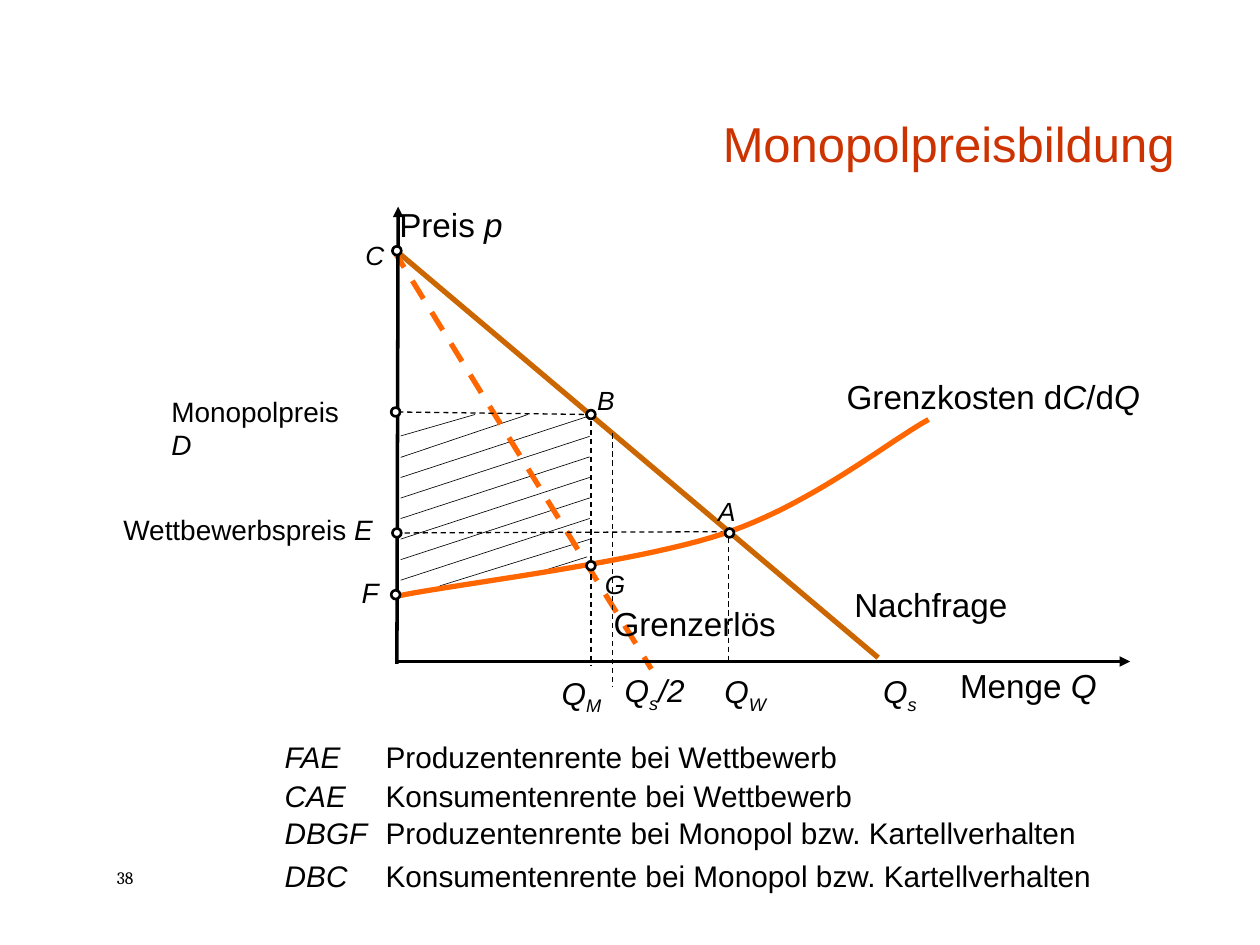
from lxml import etree
from pptx import Presentation
from pptx.dml.color import RGBColor
from pptx.enum.dml import MSO_LINE
from pptx.enum.shapes import MSO_CONNECTOR, MSO_SHAPE
from pptx.enum.text import MSO_ANCHOR, MSO_AUTO_SIZE, PP_ALIGN
from pptx.oxml.ns import qn
from pptx.util import Inches, Pt

COLORS = {
    "ink": "000000",
    "paper": "FFFFFF",
    "title": "CC3300",
    "demand": "CC6600",
    "marginal": "FF6600",
}
RGB = {name: RGBColor.from_string(value) for name, value in COLORS.items()}

presentation = Presentation()
presentation.slide_width, presentation.slide_height = Inches(10), Inches(7.5)
slide = presentation.slides.add_slide(presentation.slide_layouts[5])
shapes = slide.shapes


def add_line(start, end, width, color="ink", dashed=False, arrow=False):
    line = shapes.add_connector(
        MSO_CONNECTOR.STRAIGHT, *[Inches(value) for value in (*start, *end)])
    line.line.color.rgb = RGB[color]
    line.line.width = Pt(width)
    if dashed:
        line.line.dash_style = MSO_LINE.DASH
    if arrow:
        etree.SubElement(line.line._get_or_add_ln(), qn("a:tailEnd"), type="triangle")
    etree.SubElement(line._element.spPr, qn("a:effectLst"))


def add_text(left, top, width, height, size, runs, wrap=False, margins=(0, 0), font="Arial"):
    box = shapes.add_textbox(Inches(left), Inches(top), Inches(width), Inches(height))
    frame = box.text_frame
    frame.word_wrap = wrap
    frame.margin_left = frame.margin_right = Inches(margins[0])
    frame.margin_top = frame.margin_bottom = Inches(margins[1])
    paragraph = frame.paragraphs[0]
    paragraph.font.size = Pt(size)
    paragraph.font.name = font
    paragraph.font.color.rgb = RGB["ink"]
    for text, style in runs:
        run = paragraph.add_run()
        run.text = text
        run.font.italic = "i" in style
        if "sub" in style:
            run.font._element.set("baseline", "-25000")
    return paragraph


title = shapes.title
title.left, title.top, title.width, title.height = (
    Inches(value) for value in (2.09, 0.42, 7.33, 1))
title_frame = title.text_frame
title_frame.text = "Monopolpreisbildung"
title_frame.vertical_anchor = MSO_ANCHOR.BOTTOM
title_frame.auto_size = MSO_AUTO_SIZE.NONE
title_paragraph = title_frame.paragraphs[0]
title_paragraph.alignment = PP_ALIGN.RIGHT
title_paragraph.font.size = Pt(28)
title_paragraph.font.name = "Arial"
title_paragraph.font.color.rgb = RGB["title"]

for row in range(6):
    y = 3.79 + 0.163 * row
    add_line((3.18, y), (4.68, y - 0.49), 0.38)
for start, end in [
    ((3.18, 3.46), (3.77, 3.29)),
    ((3.18, 3.63), (4.19, 3.29)),
    ((3.49, 4.65), (4.68, 4.28)),
    ((4.28, 4.54), (4.66, 4.42)),
]:
    add_line(start, end, 0.38)

add_line((3.12, 1.97), (6.97, 5.22), 3, "demand")
add_line((3.12, 1.98), (5.17, 5.31), 3, "marginal", dashed=True)
add_line((3.16, 5.25), (8.97, 5.25), 2, arrow=True)
add_line((3.15, 5.27), (3.16, 1.64), 2, arrow=True)

for start, end in [
    ((5.76, 4.22), (3.14, 4.23)),
    ((3.16, 3.27), (4.69, 3.29)),
    ((4.69, 3.27), (4.69, 5.28)),
    ((5.78, 4.2), (5.78, 5.24)),
    ((4.86, 3.44), (4.86, 5.45)),
]:
    add_line(start, end, 0.75, dashed=True)

cost_segments = [
    ((3.16, 4.73), (3.59, 4.64), (5.03, 4.47), (5.73, 4.24)),
    ((5.73, 4.24), (6.43, 4.01), (7.03, 3.52), (7.37, 3.33)),
]
STEPS = 24
cost_points = []
for segment in cost_segments:
    for step in range(1, STEPS + 1):
        t = step / STEPS
        weights = ((1 - t) ** 3, 3 * t * (1 - t) ** 2, 3 * t ** 2 * (1 - t), t ** 3)
        cost_points.append(tuple(
            Inches(sum(w * point[axis] for w, point in zip(weights, segment)))
            for axis in (0, 1)))
builder = shapes.build_freeform(Inches(3.16), Inches(4.73))
builder.add_line_segments(cost_points, close=False)
cost_curve = builder.convert_to_shape()
cost_curve.shadow.inherit = False
cost_curve.fill.background()
cost_curve.line.color.rgb = RGB["marginal"]
cost_curve.line.width = Pt(3)

DOT = 0.07
for x, y in [(3.15, 1.99), (3.14, 3.27), (3.15, 4.23), (3.14, 4.72),
             (4.69, 3.29), (4.69, 4.49), (5.79, 4.23)]:
    dot = shapes.add_shape(MSO_SHAPE.OVAL, Inches(x - DOT / 2), Inches(y - DOT / 2),
                           Inches(DOT), Inches(DOT))
    dot.shadow.inherit = False
    dot.fill.solid()
    dot.fill.fore_color.rgb = RGB["paper"]
    dot.line.color.rgb = RGB["ink"]
    dot.line.width = Pt(1.5)

for left, top, width, height, size, runs in [
    (3.17, 1.62, 0.9, 0.32, 19, [("Preis ", ""), ("p", "i")]),
    (7.62, 5.28, 1.16, 0.32, 19, [("Menge ", ""), ("Q", "i")]),
    (6.78, 4.64, 1.22, 0.32, 19, [("Nachfrage", "")]),
    (4.87, 4.79, 1.3, 0.32, 19, [("Grenzerlös", "")]),
    (6.72, 2.99, 2.36, 0.32, 19,
     [("Grenzkosten d", ""), ("C", "i"), ("/d", ""), ("Q", "i")]),
    (1.36, 3.13, 1.55, 0.27, 16, [("Monopolpreis ", ""), ("D", "i")]),
    (0.98, 4.07, 2.04, 0.27, 16, [("Wettbewerbspreis ", ""), ("E", "i")]),
    (2.87, 4.57, 0.14, 0.27, 16, [("F", "i")]),
    (2.9, 1.9, 0.15, 0.25, 15, [("C", "i")]),
    (4.74, 3.05, 0.14, 0.25, 15, [("B", "i")]),
    (5.7, 3.93, 0.14, 0.25, 15, [("A", "i")]),
    (4.8, 4.51, 0.16, 0.25, 15, [("G", "i")]),
]:
    add_text(left, top, width, height, size, runs)

for left, top, width, subscript, suffix in [
    (4.36, 5.16, 0.65, "M", ""),
    (4.86, 5.14, 0.82, "s", "/2"),
    (5.65, 5.15, 0.65, "W", ""),
    (6.91, 5.15, 0.65, "s", ""),
]:
    runs = [("Q", ["i"]), (subscript, ["i", "sub"])]
    if suffix:
        runs.append((suffix, ["i"]))
    quantity = add_text(left, top, width, 0.49, 18, runs, wrap=True, margins=(0.1, 0.05))
    quantity.line_spacing = 1.4

for top, area, meaning in [
    (5.86, "FAE", "Produzentenrente bei Wettbewerb"),
    (6.17, "CAE", "Konsumentenrente bei Wettbewerb"),
    (6.47, "DBGF", "Produzentenrente bei Monopol bzw. Kartellverhalten"),
    (6.81, "DBC", "Konsumentenrente bei Monopol bzw. Kartellverhalten"),
]:
    add_text(2.26, top, 0.7, 0.28, 17, [(area, "i")])
    add_text(3.06, top, 6.02, 0.28, 17, [(meaning, "")], wrap=True)

add_text(0.83, 6.83, 0.67, 0.27, 10, [("38", "")], wrap=True,
         margins=(0.1, 0.05), font="Cambria")

presentation.save("out.pptx")
